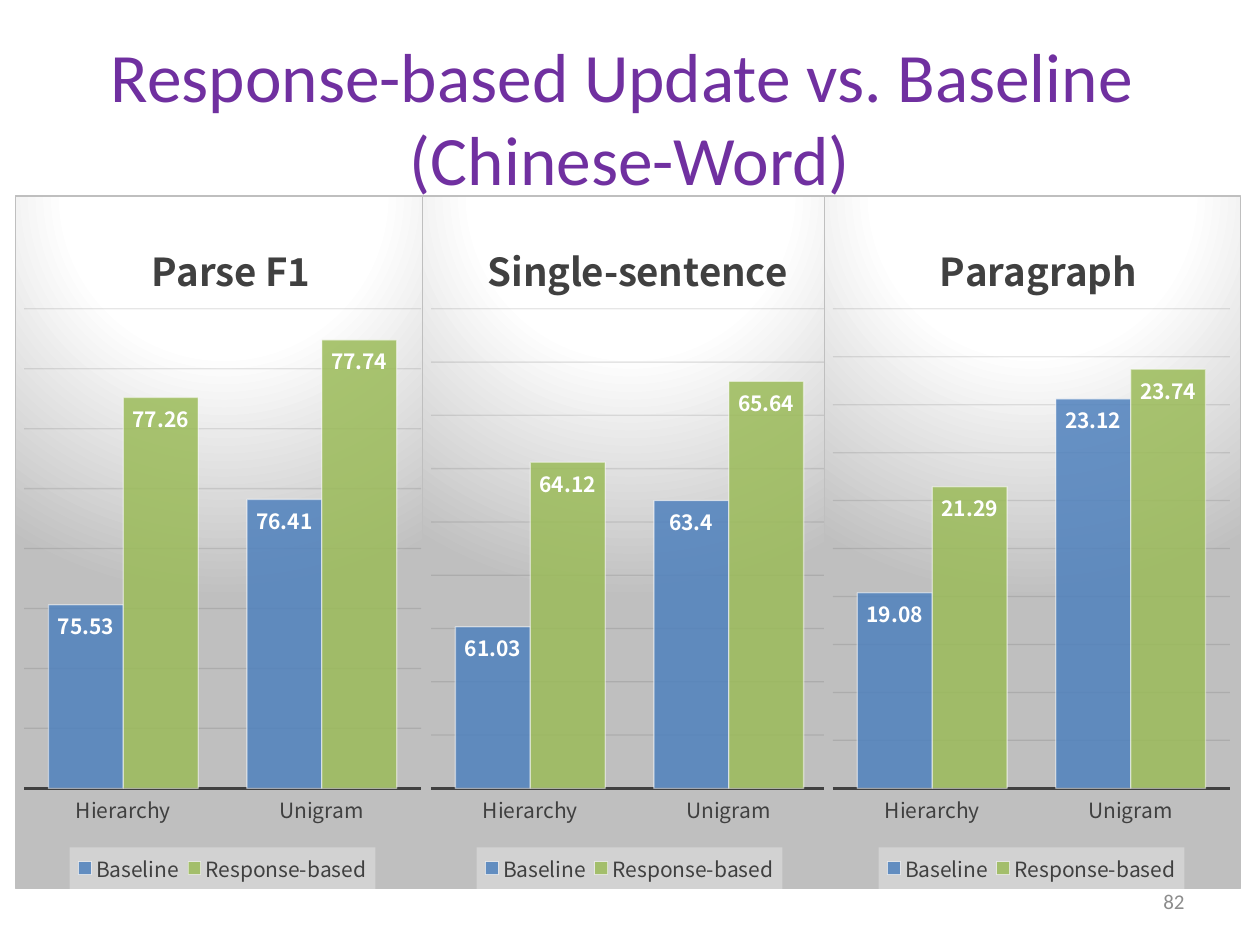
from lxml import etree
from pptx import Presentation
from pptx.chart.data import CategoryChartData
from pptx.dml.color import RGBColor
from pptx.enum.chart import XL_CHART_TYPE, XL_LABEL_POSITION, XL_LEGEND_POSITION, XL_TICK_MARK
from pptx.enum.text import MSO_ANCHOR, PP_ALIGN
from pptx.oxml import parse_xml
from pptx.oxml.ns import nsdecls, qn
from pptx.util import Inches, Pt

COLUMNS = XL_CHART_TYPE.COLUMN_CLUSTERED
INSIDE_END = XL_LABEL_POSITION.INSIDE_END
BOTTOM = XL_LEGEND_POSITION.BOTTOM
NO_TICK = XL_TICK_MARK.NONE
MIDDLE = MSO_ANCHOR.MIDDLE
CENTER, RIGHT = PP_ALIGN.CENTER, PP_ALIGN.RIGHT

PURPLE = RGBColor(0x70, 0x30, 0xA0)
GRAY = RGBColor(0x8C, 0x8C, 0x8C)
DARK = RGBColor(0x40, 0x40, 0x40)
GRID = RGBColor(0x0D, 0x0D, 0x0D)
WHITE = RGBColor(0xFF, 0xFF, 0xFF)
BLUE = RGBColor(0x4F, 0x81, 0xBD)
GREEN = RGBColor(0x9B, 0xBB, 0x59)
TEXT_FONT, CHART_FONT = "Calibri", "Noto Sans CJK KR"

CHART_TOP, CHART_W, CHART_H = 1.55, 3.31, 5.51
NS = nsdecls("c", "a")
BACKGROUND = f"""<c:spPr {NS}><a:gradFill><a:gsLst>
<a:gs pos="0"><a:srgbClr val="FFFFFF"/></a:gs>
<a:gs pos="39000"><a:srgbClr val="FFFFFF"/></a:gs>
<a:gs pos="100000"><a:srgbClr val="BFBFBF"/></a:gs></a:gsLst>
<a:path path="circle"><a:fillToRect l="50000" t="-80000" r="50000" b="180000"/></a:path>
</a:gradFill><a:ln w="9525"><a:solidFill><a:srgbClr val="BFBFBF"/></a:solidFill></a:ln></c:spPr>"""
LEGEND_FILL = f"""<c:spPr {NS}><a:solidFill><a:srgbClr val="F2F2F2"/></a:solidFill>
<a:ln><a:noFill/></a:ln></c:spPr>"""
OPACITY = {
    "c:ser/c:spPr/a:solidFill/a:srgbClr": 85,
    "c:ser/c:spPr/a:ln/a:solidFill/a:srgbClr": 50,
    "c:majorGridlines//a:srgbClr": 10,
    "c:legend/c:spPr/a:solidFill/a:srgbClr": 39,
}


def style(font, name, size, color, bold=False):
    font.name, font.size, font.bold = name, Pt(size), bold
    font.color.rgb = color


def place(parent, index, target=None, **shares):
    """Set a manual layout given as shares of the chart's size."""
    for old in parent.findall(qn("c:layout")):
        parent.remove(old)
    layout = parse_xml(f"<c:layout {NS}><c:manualLayout/></c:layout>")
    if target:
        etree.SubElement(layout[0], qn("c:layoutTarget")).set("val", target)
    for key in ("xMode", "yMode"):
        etree.SubElement(layout[0], qn("c:" + key)).set("val", "edge")
    for key, value in shares.items():
        etree.SubElement(layout[0], qn("c:" + key)).set("val", str(value))
    parent.insert(index, layout)


prs = Presentation()
prs.slide_width, prs.slide_height = Inches(10), Inches(7.5)
s = prs.slides.add_slide(prs.slide_layouts[6])

# Title and slide number
for text, box, size, color, align in (
    ("Response-based Update vs. Baseline \v(Chinese-Word)", (0.5, 0.3, 9, 1.25), 39.6, PURPLE, CENTER),
    ("82", (7.17, 6.95, 2.33, 0.4), 12, GRAY, RIGHT),
):
    tf = s.shapes.add_textbox(*map(Inches, box)).text_frame
    tf.word_wrap = True
    tf.vertical_anchor = MIDDLE
    tf.text = text
    p = tf.paragraphs[0]
    p.alignment = align
    for r in p.runs:
        style(r.font, TEXT_FONT, size, color)

# Charts: title, left, title share, baseline, response-based, axis (min, max, step)
for title, left, title_x, baseline, response, scale in (
    ("Parse F1", 0.12, 0.31, (75.53, 76.41), (77.26, 77.74), (74, 78, 0.5)),
    ("Single-sentence", 3.35, 0.14, (61.03, 63.4), (64.12, 65.64), (58, 67, 1)),
    ("Paragraph", 6.54, 0.26, (19.08, 23.12), (21.29, 23.74), (15, 25, 1)),
):
    data = CategoryChartData()
    data.categories = ["Hierarchy", "Unigram"]
    data.add_series("Baseline", baseline)
    data.add_series("Response-based", response)
    chart = s.shapes.add_chart(
        COLUMNS, Inches(left), Inches(CHART_TOP), Inches(CHART_W), Inches(CHART_H), data
    ).chart
    chart.font.name, chart.font.size = CHART_FONT, Pt(10)

    # Chart title
    chart.has_title = True
    tf = chart.chart_title.text_frame
    tf.text = title
    style(tf.paragraphs[0].runs[0].font, CHART_FONT, 22, DARK, True)
    chart.chart_title.include_in_layout = False

    # Axes
    axis = chart.category_axis
    axis.major_tick_mark = axis.minor_tick_mark = NO_TICK
    axis.format.line.color.rgb, axis.format.line.width = DARK, Pt(1.5)
    style(axis.tick_labels.font, CHART_FONT, 12, DARK)
    axis = chart.value_axis
    axis.minimum_scale, axis.maximum_scale, axis.major_unit = scale
    axis.has_major_gridlines = True
    line = axis.major_gridlines.format.line
    line.color.rgb, line.width = GRID, Pt(0.75)
    axis.visible = False

    # Columns and their labels
    plot = chart.plots[0]
    plot.gap_width, plot.overlap, plot.vary_by_categories = 65, 0, False
    for series, color in zip(plot.series, (BLUE, GREEN)):
        series.format.fill.solid()
        series.format.fill.fore_color.rgb = color
        series.format.line.color.rgb, series.format.line.width = WHITE, Pt(0.75)
        labels = series.data_labels
        labels.show_value, labels.position = True, INSIDE_END
        style(labels.font, CHART_FONT, 12, WHITE, True)

    # Legend
    chart.has_legend = True
    chart.legend.position, chart.legend.include_in_layout = BOTTOM, False
    style(chart.legend.font, CHART_FONT, 12, DARK)

    # Backgrounds, layout and transparency
    root = chart.element
    root.find(qn("c:chart")).addnext(parse_xml(BACKGROUND))
    legend = root.xpath("c:chart/c:legend")[0]
    legend.find(qn("c:txPr")).addprevious(parse_xml(LEGEND_FILL))
    place(root.xpath("c:chart/c:title")[0], 1, x=title_x, y=0.05)
    place(root.xpath("c:chart/c:plotArea")[0], 0, "inner", x=0.02, y=0.163, w=0.955, h=0.692)
    place(legend, 1, x=0.13, y=0.94, w=0.735, h=0.06)
    for query, percent in OPACITY.items():
        for clr in root.xpath(".//" + query):
            etree.SubElement(clr, qn("a:alpha")).set("val", str(percent * 1000))

prs.save("out.pptx")
